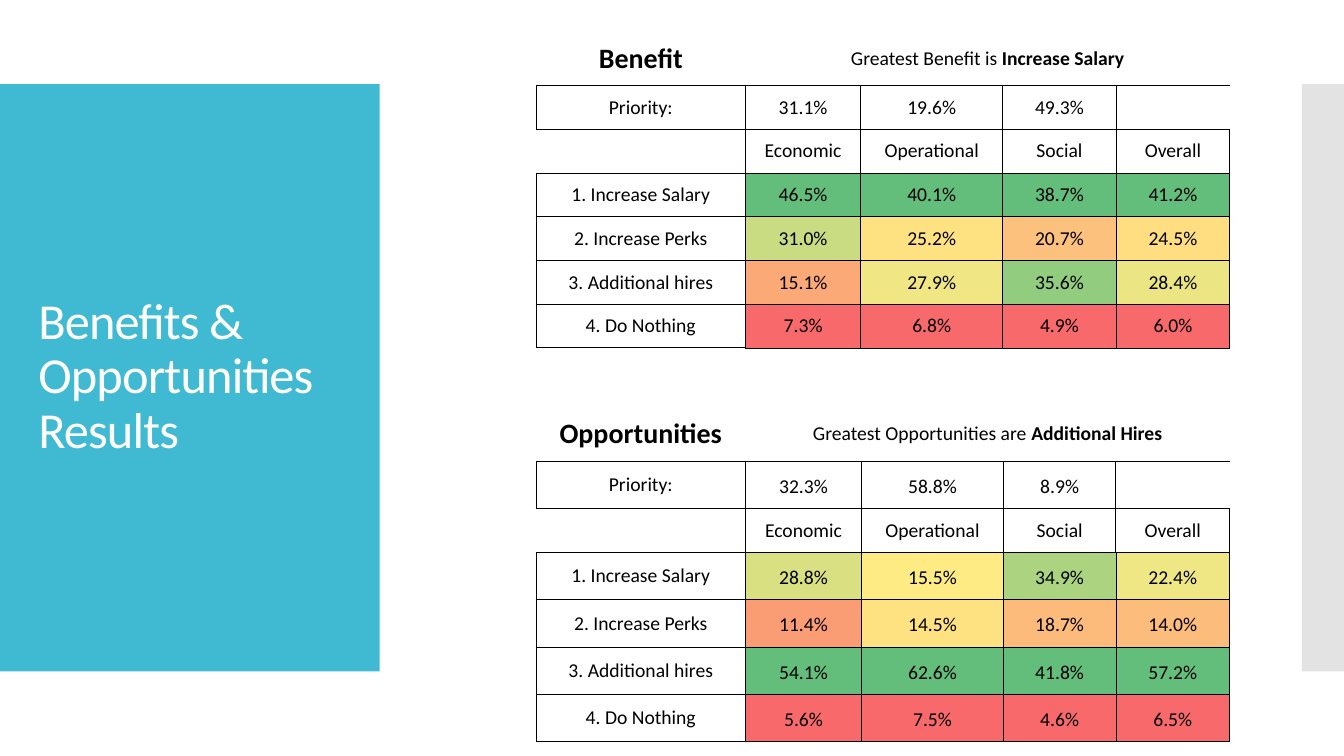
import lxml.etree
import pptx
import pptx.dml.color
import pptx.enum.shapes
import pptx.enum.text
import pptx.oxml.ns
import pptx.util

Cm = pptx.util.Cm
Pt = pptx.util.Pt
RGBColor = pptx.dml.color.RGBColor
qn = pptx.oxml.ns.qn

TEAL = RGBColor(0x40, 0xBA, 0xD2)
GREY = RGBColor(0xC8, 0xC8, 0xC8)
WHITE = RGBColor(0xFF, 0xFF, 0xFF)
BLACK = RGBColor(0x00, 0x00, 0x00)

# Border widths in points by cell role; an absent side has no line
HEADING_EDGES = {"B": 0.75}
BOX_EDGES = dict.fromkeys("LRTB", 0.75)
PRIORITY_END_EDGES = {"L": 0.75, "T": 0.75, "B": 0.75}
CORNER_EDGES = {"R": 0.75, "T": 0.75, "B": 0.75}
CRITERION_EDGES = {"L": 0.75, "R": 0.75, "T": 0.75, "B": 0.5}
OPTION_EDGES = {"L": 0.75, "R": 0.5, "T": 0.75, "B": 0.75}
SCORE_EDGES = dict.fromkeys("LRTB", 0.5)

CRITERIA = ["Economic", "Operational", "Social", "Overall"]
OPTIONS = ["1. Increase Salary", "2. Increase Perks",
           "3. Additional hires", "4. Do Nothing"]

RESULTS = [
    {
        "name": "Benefit",
        "finding": ("Greatest Benefit is ", "Increase Salary"),
        "top": 0.79,
        "columns": [5.28, 2.9, 3.58, 2.86, 2.86],
        "rows": [1.3] + [1.07] * 6,
        "spacing": 1.0,
        "priorities": ["31.1%", "19.6%", "49.3%"],
        "scores": [
            ["46.5%", "40.1%", "38.7%", "41.2%"],
            ["31.0%", "25.2%", "20.7%", "24.5%"],
            ["15.1%", "27.9%", "35.6%", "28.4%"],
            ["7.3%", "6.8%", "4.9%", "6.0%"],
        ],
        "heat": [
            ["63BE7B", "63BE7B", "63BE7B", "63BE7B"],
            ["CADC81", "FEE282", "FCC17C", "FEDE81"],
            ["FBA977", "F0E784", "92CC7E", "EBE583"],
            ["F8696B", "F8696B", "F8696B", "F8696B"],
        ],
    },
    {
        "name": "Opportunities",
        "finding": ("Greatest Opportunities are ", "Additional Hires"),
        "top": 10.26,
        "columns": [5.28, 2.92, 3.58, 2.83, 2.87],
        "rows": [1.24, 1.09, 1.07] + [1.12] * 4,
        "spacing": 1.15,
        "priorities": ["32.3%", "58.8%", "8.9%"],
        "scores": [
            ["28.8%", "15.5%", "34.9%", "22.4%"],
            ["11.4%", "14.5%", "18.7%", "14.0%"],
            ["54.1%", "62.6%", "41.8%", "57.2%"],
            ["5.6%", "7.5%", "4.6%", "6.5%"],
        ],
        "heat": [
            ["D8E082", "FEEB84", "ABD380", "EFE784"],
            ["FA9D75", "FEE282", "FCBB7A", "FCBC7B"],
            ["63BE7B", "63BE7B", "63BE7B", "63BE7B"],
            ["F8696B", "F8696B", "F8696B", "F8696B"],
        ],
    },
]


class ResultsPage:
    font = "Calibri"
    inset = Cm(0.25)

    def __init__(self, page):
        self.page = page

    def span(self, para, text, size, color=BLACK, bold=False):
        span = para.add_run()
        span.text = text
        span.font.name = self.font
        span.font.size = Pt(size)
        span.font.bold = bold
        span.font.color.rgb = color
        return span

    def panel(self, left, width, color, opacity=100):
        box = self.page.shapes.add_shape(
            pptx.enum.shapes.MSO_SHAPE.RECTANGLE,
            Cm(left), Cm(2.12), Cm(width), Cm(14.8))
        box.shadow.inherit = False
        box.line.fill.background()
        box.fill.solid()
        box.fill.fore_color.rgb = color
        if opacity < 100:
            tint = box.element.spPr.find(qn("a:solidFill"))[0]
            lxml.etree.SubElement(tint, qn("a:alpha"), val=str(opacity * 1000))

    def title(self, text):
        box = self.page.shapes.title
        box.left, box.top, box.width, box.height = Cm(0.71), Cm(3.12), Cm(8.18), Cm(12.78)
        frame = box.text_frame
        frame.word_wrap = True
        frame.auto_size = pptx.enum.text.MSO_AUTO_SIZE.NONE
        frame.vertical_anchor = pptx.enum.text.MSO_ANCHOR.MIDDLE
        para = frame.paragraphs[0]
        para.alignment = pptx.enum.text.PP_ALIGN.LEFT
        para.line_spacing = 0.9
        span = self.span(para, text, 36, WHITE)
        span.font._element.set("spc", "-60")
        # Bring the title in front of the panels
        box.element.getparent().append(box.element)

    def borders(self, cell, edges):
        properties = cell._tc.get_or_add_tcPr()
        for index, side in enumerate("LRTB"):
            width = edges.get(side, 0)
            line = lxml.etree.Element(qn("a:ln" + side), w=str(int(Pt(width))))
            if width:
                fill = lxml.etree.SubElement(line, qn("a:solidFill"))
                lxml.etree.SubElement(fill, qn("a:srgbClr"), val=str(BLACK))
            else:
                lxml.etree.SubElement(line, qn("a:noFill"))
            properties.insert(index, line)

    def cell(self, cell, edges, *texts, size=14, bold=False, spacing=1.0, color=None):
        """Fill one cell; any text after the first is bold."""
        if color is None:
            cell.fill.background()
        else:
            cell.fill.solid()
            cell.fill.fore_color.rgb = color
        self.borders(cell, edges)
        if not texts:
            return
        cell.margin_left = cell.margin_right = self.inset
        cell.margin_top = cell.margin_bottom = self.inset
        cell.vertical_anchor = pptx.enum.text.MSO_ANCHOR.MIDDLE
        para = cell.text_frame.paragraphs[0]
        para.alignment = pptx.enum.text.PP_ALIGN.CENTER
        para.line_spacing = spacing
        for index, text in enumerate(texts):
            self.span(para, text, size, bold=bold or index > 0)

    def results(self, result):
        columns, rows, spacing = result["columns"], result["rows"], result["spacing"]
        table = self.page.shapes.add_table(
            len(rows), len(columns), Cm(13.51), Cm(result["top"]),
            Cm(sum(columns)), Cm(sum(rows))).table
        table.first_row = table.horz_banding = False
        for column, width in zip(table.columns, columns):
            column.width = Cm(width)
        for row, height in zip(table.rows, rows):
            row.height = Cm(height)

        # Heading row
        table.cell(0, 1).merge(table.cell(0, 4))
        self.cell(table.cell(0, 0), HEADING_EDGES, result["name"], size=20, bold=True)
        self.cell(table.cell(0, 1), HEADING_EDGES, *result["finding"])
        for column in range(2, 5):
            self.cell(table.cell(0, column), HEADING_EDGES)

        # Priorities and criteria
        self.cell(table.cell(1, 0), BOX_EDGES, "Priority:")
        for column, priority in enumerate(result["priorities"], 1):
            self.cell(table.cell(1, column), BOX_EDGES, priority, spacing=spacing)
        self.cell(table.cell(1, 4), PRIORITY_END_EDGES)
        self.cell(table.cell(2, 0), CORNER_EDGES)
        for column, criterion in enumerate(CRITERIA, 1):
            self.cell(table.cell(2, column), CRITERION_EDGES, criterion)

        # Option scores on a heat scale
        lines = zip(OPTIONS, result["scores"], result["heat"])
        for row, (option, scores, heat) in enumerate(lines, 3):
            self.cell(table.cell(row, 0), OPTION_EDGES, option)
            for column, (score, color) in enumerate(zip(scores, heat), 1):
                self.cell(table.cell(row, column), SCORE_EDGES, score,
                          spacing=spacing, color=RGBColor.from_string(color))


def main():
    deck = pptx.Presentation()
    deck.slide_width, deck.slide_height = Cm(33.87), Cm(19.05)
    page = ResultsPage(deck.slides.add_slide(deck.slide_layouts[5]))
    page.panel(0, 9.57, TEAL)
    page.panel(32.81, 1.06, GREY, opacity=50)
    page.title("Benefits & Opportunities Results")
    for result in RESULTS:
        page.results(result)
    deck.save("out.pptx")


if __name__ == "__main__":
    main()
